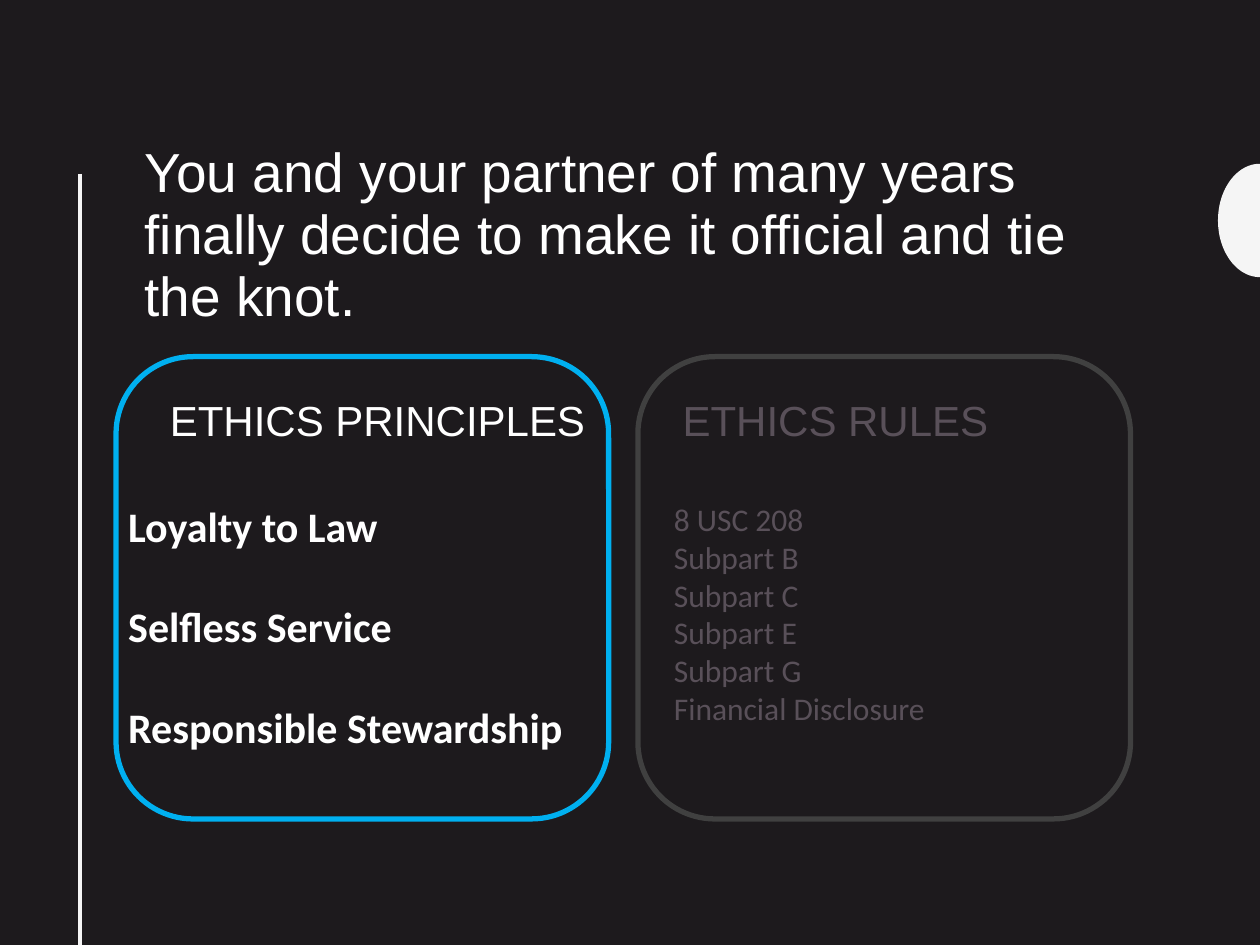
from math import cos, pi, sin

from lxml import etree
from pptx import Presentation
from pptx.dml.color import RGBColor
from pptx.enum.shapes import MSO_CONNECTOR, MSO_SHAPE
from pptx.enum.text import MSO_ANCHOR
from pptx.oxml.ns import qn
from pptx.util import Pt

STRAIGHT = MSO_CONNECTOR.STRAIGHT
ROUNDED = MSO_SHAPE.ROUNDED_RECTANGLE
TOP = MSO_ANCHOR.TOP
MIDDLE = MSO_ANCHOR.MIDDLE

WIDTH, HEIGHT = 720, 540
COLORS = {
    "background": "1D1A1D",
    "ornament": "F5F5F5",
    "active": "00B0F0",
    "inactive": "404040",
    "text": "FFFFFF",
    "muted": "595059",
}


class SlideBuilder:
    def __init__(self, slide):
        self.slide = slide
        self.shapes = slide.shapes

    def color(self, name):
        return RGBColor.from_string(COLORS[name])

    def background(self, color):
        fill = self.slide.background.fill
        fill.solid()
        fill.fore_color.rgb = self.color(color)

    def half_ellipse(self, center_x, center_y, radius_x, radius_y, color, steps=48):
        angles = [pi / 2 + pi * step / steps for step in range(steps + 1)]
        points = [
            (Pt(center_x + radius_x * cos(angle)), Pt(center_y - radius_y * sin(angle)))
            for angle in angles
        ]
        outline = self.shapes.build_freeform(*points[0], scale=1.0)
        outline.add_line_segments(points[1:], close=True)
        ornament = outline.convert_to_shape()
        ornament.shadow.inherit = False
        ornament.fill.solid()
        ornament.fill.fore_color.rgb = self.color(color)
        ornament.line.fill.background()

    def line(self, x1, y1, x2, y2, color, weight):
        rule = self.shapes.add_connector(STRAIGHT, Pt(x1), Pt(y1), Pt(x2), Pt(y2))
        rule.line.color.rgb = self.color(color)
        rule.line.width = Pt(weight)
        etree.SubElement(rule._element.spPr, qn("a:effectLst"))

    def panel(self, left, top, width, height, color):
        frame = self.shapes.add_shape(ROUNDED, Pt(left), Pt(top), Pt(width), Pt(height))
        frame.shadow.inherit = False
        frame.fill.background()
        frame.line.color.rgb = self.color(color)
        frame.line.width = Pt(3)

    def text(self, left, top, width, height, content, size, color, font="Arial",
             bold=False, gap=0, spacing=1.0, anchor=TOP):
        box = self.shapes.add_textbox(Pt(left), Pt(top), Pt(width), Pt(height))
        frame = box.text_frame
        frame.word_wrap = True
        frame.vertical_anchor = anchor
        frame.text = content
        for paragraph in frame.paragraphs:
            paragraph.line_spacing = spacing
            paragraph.space_after = Pt(gap)
            for run in paragraph.runs:
                run.font.name = font
                run.font.size = Pt(size)
                run.font.bold = bold
                run.font.color.rgb = self.color(color)


def main():
    presentation = Presentation()
    presentation.slide_width = Pt(WIDTH)
    presentation.slide_height = Pt(HEIGHT)
    builder = SlideBuilder(presentation.slides.add_slide(presentation.slide_layouts[6]))

    builder.background("background")
    builder.half_ellipse(WIDTH, 126, 24, 32.4, "ornament")
    builder.line(45.6, 99.4, 45.6, HEIGHT, "ornament", 2)

    scenario = ("You and your partner of many years finally decide "
                "to make it official and tie the knot.")
    builder.text(75.6, 76.3, 576.7, 116.6, scenario, 31.4, "text",
                 spacing=0.94, anchor=MIDDLE)

    columns = [
        ("ETHICS PRINCIPLES", 66.3, 90, "active", "text"),
        ("ETHICS RULES", 364.5, 383, "inactive", "muted"),
    ]
    for heading, panel_left, heading_left, border, color in columns:
        builder.panel(panel_left, 203.8, 281.5, 264.2, border)
        builder.text(heading_left, 221.8, 260, 36, heading, 24, color)

    principles = ["Loyalty to Law", "Selfless Service", "Responsible Stewardship"]
    builder.text(66.2, 282.2, 276.5, 152.6, "\n".join(principles), 24, "text",
                 font="Calibri", bold=True, gap=28.8)

    rules = ["8 USC 208", "Subpart B", "Subpart C", "Subpart E", "Subpart G",
             "Financial Disclosure"]
    builder.text(378, 282.2, 342, 138.2, "\n".join(rules), 18, "muted", font="Calibri")

    presentation.save("out.pptx")


if __name__ == "__main__":
    main()
